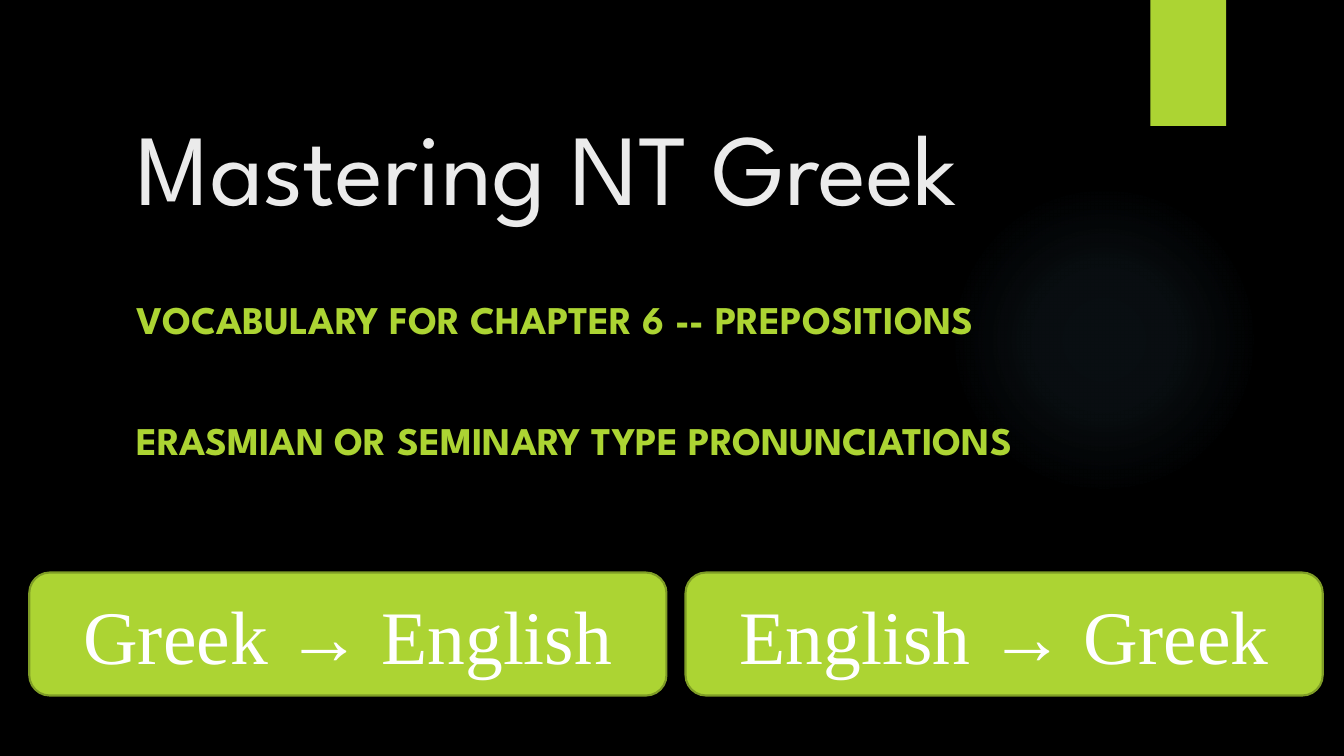
from pptx import Presentation
from pptx.dml.color import RGBColor
from pptx.enum.shapes import MSO_SHAPE as Shape
from pptx.enum.text import MSO_ANCHOR as Anchor, PP_ALIGN as Align
from pptx.oxml import parse_xml
from pptx.oxml.ns import nsdecls, qn
from pptx.util import Inches, Pt

BLACK = RGBColor(0x00, 0x00, 0x00)
WHITE = RGBColor(0xFF, 0xFF, 0xFF)
OFF_WHITE = RGBColor(0xEB, 0xEB, 0xEB)
LIME = RGBColor(0xAC, 0xD4, 0x33)
OLIVE = RGBColor(0x7F, 0x9D, 0x26)
SKY = RGBColor(0x7A, 0xC4, 0xF0)

HEADING = {"name": "League Spartan", "size": Pt(72)}
SUBHEADING = {"name": "League Spartan", "size": Pt(28), "bold": True}
BUTTON = {"name": "Times New Roman", "size": Pt(54)}


class Deck:
    """Style and current slide; boxes are (left, top, width, height) in percent of the slide."""

    def __init__(self):
        self.prs = Presentation()
        self.prs.slide_width = Inches(13.33)
        self.prs.slide_height = Inches(7.5)
        self.slide = self.prs.slides.add_slide(self.prs.slide_layouts[6])
        fill = self.slide.background.fill
        fill.solid()
        fill.fore_color.rgb = BLACK

    def place(self, box):
        sizes = (self.prs.slide_width, self.prs.slide_height) * 2
        return [round(size * share / 100) for size, share in zip(sizes, box)]

    def set_lines(self, s, lines, style, color, anchor=Anchor.TOP, align=Align.LEFT, gap=0):
        tf = s.text_frame
        tf.word_wrap = True
        tf.vertical_anchor = anchor
        for i, line in enumerate(lines):
            p = tf.paragraphs[0] if i == 0 else tf.add_paragraph()
            p.alignment = align
            if i:
                p.space_before = Pt(gap)
            r = p.add_run()
            r.text = line
            for key, value in style.items():
                setattr(r.font, key, value)
            r.font.color.rgb = color

    def text(self, box, lines, style, color, **layout):
        s = self.slide.shapes.add_textbox(*self.place(box))
        self.set_lines(s, lines, style, color, **layout)

    def shape(self, kind, box, fill=None, line=None):
        s = self.slide.shapes.add_shape(kind, *self.place(box))
        s.shadow.inherit = False
        if fill is None:
            s.fill.background()
        else:
            s.fill.solid()
            s.fill.fore_color.rgb = fill
        if line is None:
            s.line.fill.background()
        else:
            s.line.color.rgb = line
            s.line.width = Pt(1.5)
        return s

    def glow(self, box, color, stops):
        """Draw an ellipse that fades outward; stops are (position, opacity) in percent."""
        s = self.shape(Shape.OVAL, box)
        marks = "".join(
            f'<a:gs pos="{pos * 1000}"><a:srgbClr val="{color}">'
            f'<a:alpha val="{opacity * 1000}"/></a:srgbClr></a:gs>'
            for pos, opacity in stops)
        gradient = parse_xml(
            f'<a:gradFill {nsdecls("a")} rotWithShape="1"><a:gsLst>{marks}</a:gsLst>'
            '<a:path path="circle"><a:fillToRect l="50000" t="50000" r="50000" b="50000"/>'
            '</a:path></a:gradFill>')
        spPr = s._element.spPr
        spPr.replace(spPr.find(qn("a:noFill")), gradient)

    def button(self, box, label):
        s = self.shape(Shape.ROUNDED_RECTANGLE, box, LIME, OLIVE)
        self.set_lines(s, [label], BUTTON, WHITE, anchor=Anchor.MIDDLE, align=Align.CENTER)


def main():
    deck = Deck()
    deck.glow((70.59, 24.4, 23.11, 41.07), SKY, [(0, 7), (36, 6), (69, 0)])
    deck.shape(Shape.RECTANGLE, (85.6, 0, 5.63, 16.67), LIME)
    deck.text((9.45, 9.33, 75.32, 21.2), ["Mastering NT Greek"],
              HEADING, OFF_WHITE, anchor=Anchor.BOTTOM)
    deck.text((9.45, 38.4, 78.24, 35.87),
              ["VOCABULARY FOR CHAPTER 6 -- PREPOSITIONS",
               "ERASMIAN OR SEMINARY TYPE PRONUNCIATIONS"],
              SUBHEADING, LIME, gap=53)
    for i, label in enumerate(["Greek → English", "English → Greek"]):
        deck.button((2.18 + 48.83 * i, 75.73, 47.41, 16.27), label)
    deck.prs.save("out.pptx")


if __name__ == "__main__":
    main()
